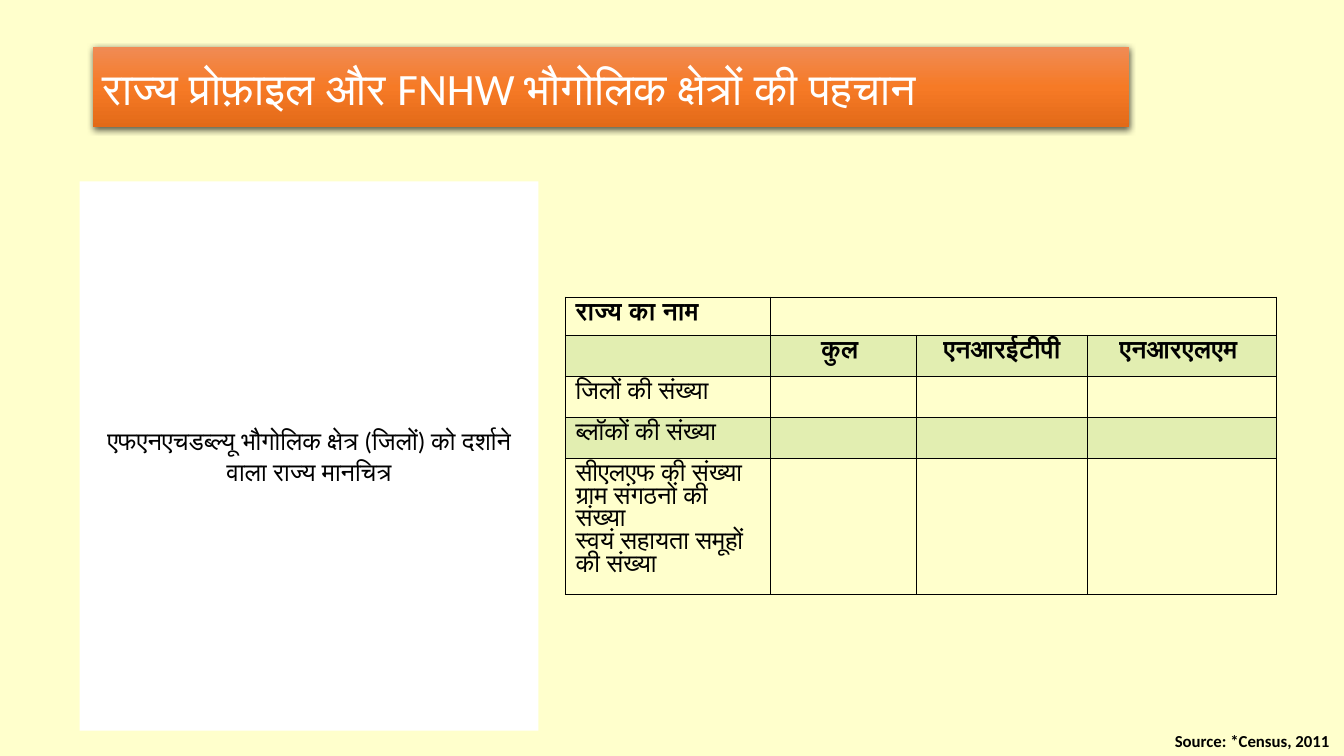
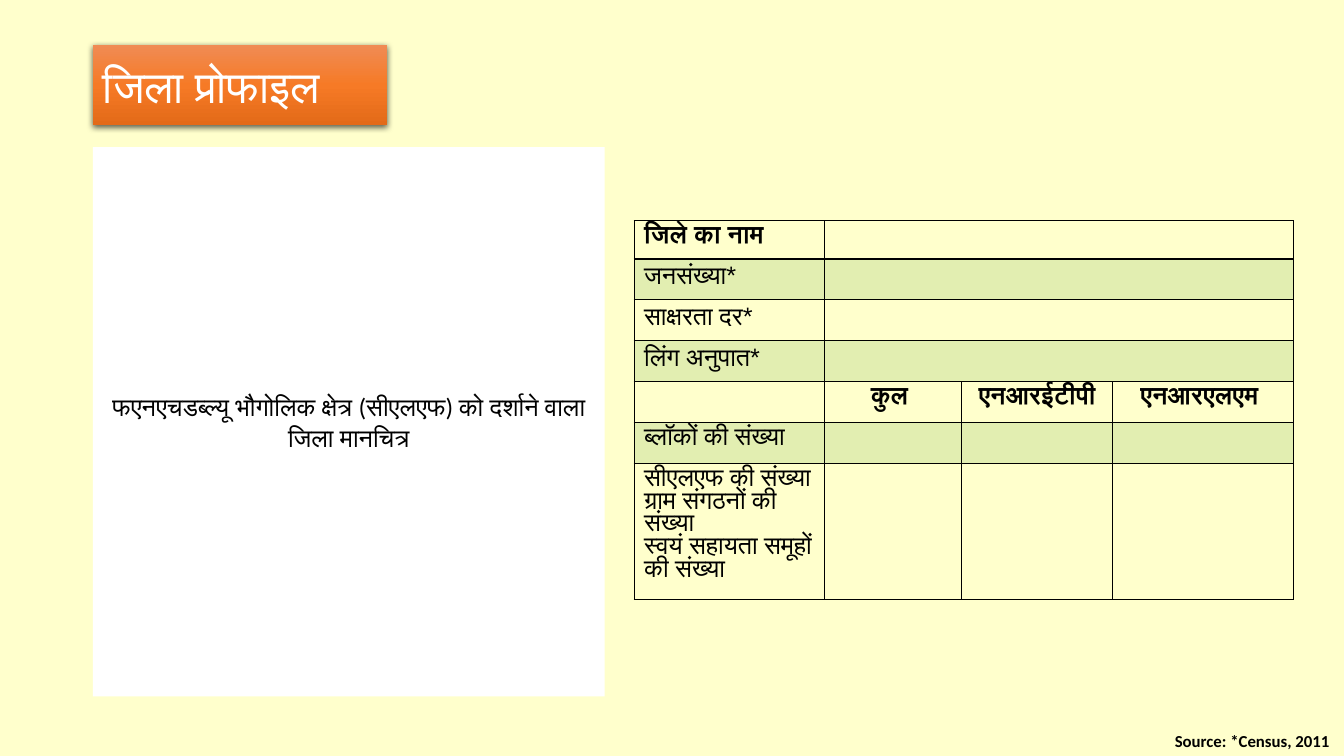
from lxml.etree import SubElement
from pptx import Presentation
from pptx.dml.color import RGBColor
from pptx.enum.shapes import MSO_SHAPE
from pptx.enum.text import MSO_ANCHOR, MSO_AUTO_SIZE, PP_ALIGN
from pptx.oxml import parse_xml
from pptx.oxml.ns import nsdecls, qn
from pptx.util import Cm, Pt

CREAM = RGBColor(0xFF, 0xFF, 0xCC)
WHITE = RGBColor(0xFF, 0xFF, 0xFF)
BLACK = RGBColor(0, 0, 0)
GREEN = RGBColor(0x70, 0xAD, 0x47)
GLOW = (
    (0, RGBColor(0xF0, 0x8B, 0x54)),
    (50, RGBColor(0xF6, 0x7A, 0x26)),
    (100, RGBColor(0xE3, 0x6A, 0x18)),
)
BODY = "Calibri"
GRID = "Arial"
HEADS = ("कुल ", "एनआरईटीपी", "एनआरएलएम ")
BLOCKS = "ब्लॉकों की संख्या"
GROUPS = "सीएलएफ की संख्या\nग्राम संगठनों की संख्या\nस्वयं सहायता समूहों की संख्या"
FIRST, ROW, LAST = 0.95, 1.03, 3.43


def style(para, name, size, color, bold=False, align=PP_ALIGN.LEFT):
    """Set the font and alignment of one paragraph."""
    para.alignment = align
    font = para.font
    font.name, font.size, font.bold = name, Pt(size), bold
    font.color.rgb = color


def place(shape, box):
    """Move a shape to a box of left, top, width and height in cm."""
    shape.left, shape.top, shape.width, shape.height = map(Cm, box)


def add_title(slide, text, box):
    """Fill the title placeholder as a shaded orange band."""
    title = slide.shapes.title
    place(title, box)
    stops = "".join(
        f'<a:gs pos="{pos * 1000}"><a:srgbClr val="{color}"/></a:gs>'
        for pos, color in GLOW
    )
    props = title._element.spPr
    props.append(parse_xml(
        f'<a:gradFill {nsdecls("a")} rotWithShape="1"><a:gsLst>{stops}</a:gsLst>'
        '<a:lin ang="5400000" scaled="0"/></a:gradFill>'
    ))
    props.append(parse_xml(
        f'<a:effectLst {nsdecls("a")}>'
        f'<a:outerShdw blurRad="{Pt(4.5)}" dist="{Pt(1.5)}" dir="5400000" rotWithShape="0">'
        f'<a:srgbClr val="{BLACK}"><a:alpha val="63000"/></a:srgbClr>'
        '</a:outerShdw></a:effectLst>'
    ))
    frame = title.text_frame
    frame.text = text
    frame.auto_size = MSO_AUTO_SIZE.NONE
    frame.vertical_anchor = MSO_ANCHOR.MIDDLE
    style(frame.paragraphs[0], BODY, 32, WHITE)


def add_map(slide, text, box):
    """Add the white panel that holds the place of a map."""
    panel = slide.shapes.add_shape(MSO_SHAPE.RECTANGLE, *map(Cm, box))
    panel.shadow.inherit = False
    panel.fill.solid()
    panel.fill.fore_color.rgb = WHITE
    panel.line.fill.background()
    frame = panel.text_frame
    frame.word_wrap = True
    frame.vertical_anchor = MSO_ANCHOR.MIDDLE
    frame.text = text
    style(frame.paragraphs[0], BODY, 18, BLACK, align=PP_ALIGN.CENTER)


def paint(cell, shade):
    """Give a cell thin black borders and, if asked, a pale green fill."""
    props = cell._tc.get_or_add_tcPr()
    for side in ("lnL", "lnR", "lnT", "lnB"):
        props.append(parse_xml(
            f'<a:{side} {nsdecls("a")} w="{Pt(1)}"><a:solidFill>'
            f'<a:srgbClr val="{BLACK}"/></a:solidFill></a:{side}>'
        ))
    if not shade:
        cell.fill.background()
        return
    cell.fill.solid()
    cell.fill.fore_color.rgb = GREEN
    color = props.find(qn("a:solidFill")).find(qn("a:srgbClr"))
    SubElement(color, qn("a:alpha")).set("val", "20000")


def add_grid(slide, left, top, cols, rows):
    """Add a table of (label, values) rows; no values means a wide cell."""
    highs = [FIRST] + [ROW] * (len(rows) - 2) + [LAST]
    frame = slide.shapes.add_table(
        len(rows), len(cols), Cm(left), Cm(top), Cm(sum(cols)), Cm(sum(highs))
    )
    table = frame.table
    table.first_row = table.horz_banding = False
    for col, wide in zip(table.columns, cols):
        col.width = Cm(wide)
    for i, (label, vals) in enumerate(rows):
        table.rows[i].height = Cm(highs[i])
        bold = i == 0 or vals == HEADS
        for j, text in enumerate((label, *(vals or [""] * 3))):
            cell = table.cell(i, j)
            paint(cell, i % 2 == 1)
            cell.text = text
            for para in cell.text_frame.paragraphs:
                align = PP_ALIGN.CENTER if j else PP_ALIGN.LEFT
                style(para, GRID, 18, BLACK, bold, align)
                para.line_spacing = 0.9
        if not vals:
            table.cell(i, 1).merge(table.cell(i, 3))


def add_source(slide):
    """Add the source line at the lower right."""
    note = slide.shapes.add_textbox(Cm(28.68), Cm(18.29), Cm(5.08), Cm(0.76))
    frame = note.text_frame
    frame.word_wrap = True
    frame.auto_size = MSO_AUTO_SIZE.SHAPE_TO_FIT_TEXT
    frame.text = "Source: *Census, 2011"
    style(frame.paragraphs[0], BODY, 12, BLACK, True, PP_ALIGN.RIGHT)


def add_slide(deck, title, area, grid):
    """Add one profile slide with its title, map panel, table and source."""
    slide = deck.slides.add_slide(deck.slide_layouts[5])
    add_title(slide, *title)
    add_map(slide, *area)
    add_grid(slide, *grid)
    add_source(slide)


def main():
    """Build and save the deck."""
    deck = Presentation()
    deck.slide_width, deck.slide_height = Cm(33.87), Cm(19.05)
    back = deck.slide_master.background.fill
    back.solid()
    back.fore_color.rgb = CREAM
    blank = ("",) * 3
    add_slide(
        deck,
        ("राज्य प्रोफ़ाइल और FNHW भौगोलिक क्षेत्रों की पहचान", (2.34, 1.19, 26.11, 2.01)),
        ("एफएनएचडब्ल्यू भौगोलिक क्षेत्र (जिलों) को दर्शाने वाला राज्य मानचित्र",
         (2.01, 4.57, 11.56, 13.84)),
        (14.25, 7.49, (5.16, 3.68, 4.32, 4.75), (
            ("राज्य का नाम", None),
            ("", HEADS),
            ("जिलों की संख्या", blank),
            (BLOCKS, blank),
            (GROUPS, blank),
        )),
    )
    add_slide(
        deck,
        ("जिला प्रोफाइल", (2.34, 1.14, 7.42, 2.01)),
        ("फएनएचडब्ल्यू भौगोलिक क्षेत्र (सीएलएफ) को दर्शाने वाला जिला मानचित्र",
         (2.34, 3.71, 12.9, 13.84)),
        (15.98, 5.56, (4.8, 3.45, 3.81, 4.55), (
            ("जिले का नाम", None),
            ("जनसंख्या*", None),
            ("साक्षरता दर*", None),
            ("लिंग अनुपात*", None),
            ("", HEADS),
            (BLOCKS, blank),
            (GROUPS, blank),
        )),
    )
    deck.save("out.pptx")


if __name__ == "__main__":
    main()
